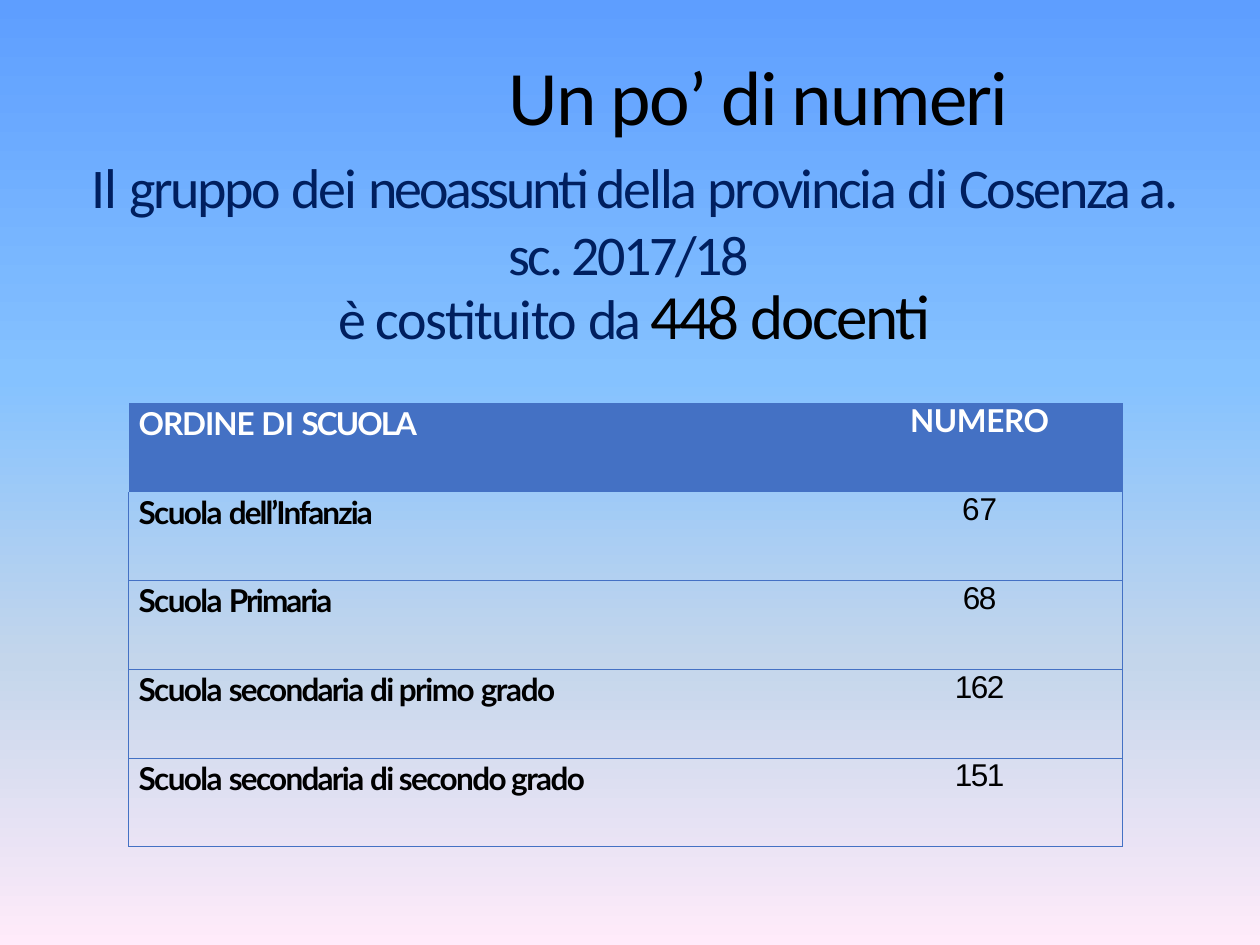
from lxml import etree
from pptx import Presentation
from pptx.dml.color import RGBColor
from pptx.enum.text import MSO_ANCHOR, MSO_AUTO_SIZE, PP_ALIGN
from pptx.oxml.ns import qn
from pptx.util import Inches, Pt

CENTER, LEFT = PP_ALIGN.CENTER, PP_ALIGN.LEFT
MIDDLE = MSO_ANCHOR.MIDDLE
FIT_SHAPE = MSO_AUTO_SIZE.SHAPE_TO_FIT_TEXT
TITLE_ONLY = 5
NO_STYLE = "{2D5ABB26-0587-4C30-8999-92F81FD0307C}"

BLACK = RGBColor(0x00, 0x00, 0x00)
WHITE = RGBColor(0xFF, 0xFF, 0xFF)
NAVY = RGBColor(0x00, 0x1F, 0x5F)
BLUE = RGBColor(0x44, 0x71, 0xC4)
SKY = [
    (0, RGBColor(0x5E, 0x9E, 0xFF)),
    (40, RGBColor(0x85, 0xC2, 0xFF)),
    (70, RGBColor(0xC4, 0xD6, 0xEB)),
    (100, RGBColor(0xFF, 0xEB, 0xFA)),
]

# Text formats
HEADING = dict(name="Calibri", size=Pt(44), bold=False, color=BLACK)
INTRO = dict(HEADING, size=Pt(32), color=NAVY)
TOTAL = dict(HEADING, size=Pt(36))
HEADER = dict(name="Lato", size=Pt(18), bold=True, color=WHITE)
SCHOOL = dict(HEADER, color=BLACK)
COUNT = dict(name="Arial", size=Pt(18), bold=False, color=BLACK)
SCHOOL_PARAGRAPH = dict(alignment=LEFT, space_before=Pt(0.7))
COUNT_PARAGRAPH = dict(alignment=CENTER, line_spacing=Pt(20.4))

# Each piece of text is (words, letter spacing in points)
INTRO_PIECES = [
    ("Il ", -0.6), ("gruppo ", -1.4), ("dei ", -1.2), ("neoassunti ", -1.8),
    ("della ", -1.3), ("provincia ", -1.4), ("di ", -0.8),
    ("Cosenza a. sc. 2017/18 ", -1.4),
]
RESULT_PIECES = [("è ", -2), ("costituito ", -0.8), ("da ", -2.1)]
TOTAL_PIECES = [("448 ", -1.9), ("docenti", -1.3)]
ROWS = [
    ([("ORDINE ", -0.6), ("DI ", -0.2), ("SCUOLA", -1.1)], ("NUMERO", -0.2)),
    ([("Scuola ", -0.9), ("dell’Infanzia", -1.1)], ("67", 0)),
    ([("Scuola ", -0.9), ("Primaria", -1.1)], ("68", -0.9)),
    ([("Scuola ", -0.9), ("secondaria ", -1), ("di primo ", -0.9),
      ("grado", -0.8)], ("162", -0.9)),
    ([("Scuola ", -0.9), ("secondaria ", -1), ("di secondo grado", -0.9)],
     ("151", -0.9)),
]


def set_all(target, values):
    for attribute, value in values.items():
        setattr(target, attribute, value)


def format_paragraph(paragraph, indent, values):
    set_all(paragraph, values)
    properties = paragraph._p.get_or_add_pPr()
    properties.set("marL", str(Inches(indent)))
    properties.set("indent", "0")


def add_pieces(paragraph, pieces, text_format):
    for words, spacing in pieces:
        run = paragraph.add_run()
        run.text = words
        for attribute, value in text_format.items():
            if attribute == "color":
                run.font.color.rgb = value
            else:
                setattr(run.font, attribute, value)
        run._r.get_or_add_rPr().set("spc", str(round(spacing * 100)))


def paint_background(slide):
    fill = slide.background.fill
    fill.gradient()
    fill.gradient_angle = 270  # counter-clockwise: top to bottom
    properties = slide._element.cSld.bg.bgPr
    stops = properties.find(".//" + qn("a:gsLst"))
    for stop in list(stops):
        stops.remove(stop)
    for position, color in SKY:
        stop = etree.SubElement(stops, qn("a:gs"), pos=str(position * 1000))
        etree.SubElement(stop, qn("a:srgbClr"), val=str(color))


def add_heading(slide):
    title = slide.shapes.title
    set_all(title, dict(left=Inches(0.63), top=Inches(0.13),
                        width=Inches(8.75), height=Inches(2.77)))
    frame = title.text_frame
    set_all(frame, dict(margin_left=0, margin_top=Inches(0.15), margin_right=0,
                        margin_bottom=0, vertical_anchor=MIDDLE,
                        word_wrap=True, auto_size=FIT_SHAPE))
    heading = frame.paragraphs[0]
    format_paragraph(heading, 2.03, dict(alignment=CENTER, space_before=Pt(10.8)))
    add_pieces(heading, [("Un po’ di numeri", -1)], HEADING)

    intro = frame.add_paragraph()
    format_paragraph(intro, 0.05, dict(alignment=CENTER, space_before=Pt(7.7),
                                       line_spacing=Pt(37.8)))
    add_pieces(intro, INTRO_PIECES, INTRO)
    intro.add_line_break()
    add_pieces(intro, RESULT_PIECES, INTRO)
    add_pieces(intro, TOTAL_PIECES, TOTAL)


def add_borders(cell, sides):
    properties = cell._tc.get_or_add_tcPr()
    for side in sides:
        line = etree.SubElement(properties, qn("a:ln" + side), w=str(Pt(0.5)))
        fill = etree.SubElement(line, qn("a:solidFill"))
        etree.SubElement(fill, qn("a:srgbClr"), val=str(BLUE))


def fill_cell(cell, pieces, text_format, indent, paragraph_format, top_margin):
    set_all(cell, dict(margin_left=0, margin_top=Inches(top_margin),
                       margin_right=0, margin_bottom=0))
    paragraph = cell.text_frame.paragraphs[0]
    format_paragraph(paragraph, indent, paragraph_format)
    add_pieces(paragraph, pieces, text_format)


def add_school_table(slide):
    frame = slide.shapes.add_table(len(ROWS), 2, Inches(1.02), Inches(3.2),
                                   Inches(7.89), Inches(3.52))
    table = frame.table
    table._tbl.tblPr.find(qn("a:tableStyleId")).text = NO_STYLE
    for column, width in zip(table.columns, (5.51, 2.38)):
        column.width = Inches(width)

    for index, (school, count) in enumerate(ROWS):
        is_header = index == 0
        school_cell, count_cell = table.cell(index, 0), table.cell(index, 1)
        fill_cell(school_cell, school, HEADER if is_header else SCHOOL,
                  0.08, SCHOOL_PARAGRAPH, 0.01)
        fill_cell(count_cell, [count], HEADER if is_header else COUNT,
                  0.11, COUNT_PARAGRAPH, 0)
        for cell, outer_side in ((school_cell, "L"), (count_cell, "R")):
            if is_header:
                cell.fill.solid()
                cell.fill.fore_color.rgb = BLUE
            else:
                inner_top = ["T"] if index > 1 else []
                add_borders(cell, [outer_side, *inner_top, "B"])
                cell.fill.background()


def main():
    presentation = Presentation()
    set_all(presentation, dict(slide_width=Inches(10), slide_height=Inches(7.5)))
    slide = presentation.slides.add_slide(presentation.slide_layouts[TITLE_ONLY])
    paint_background(slide)
    add_heading(slide)
    add_school_table(slide)
    presentation.save("out.pptx")


if __name__ == "__main__":
    main()
